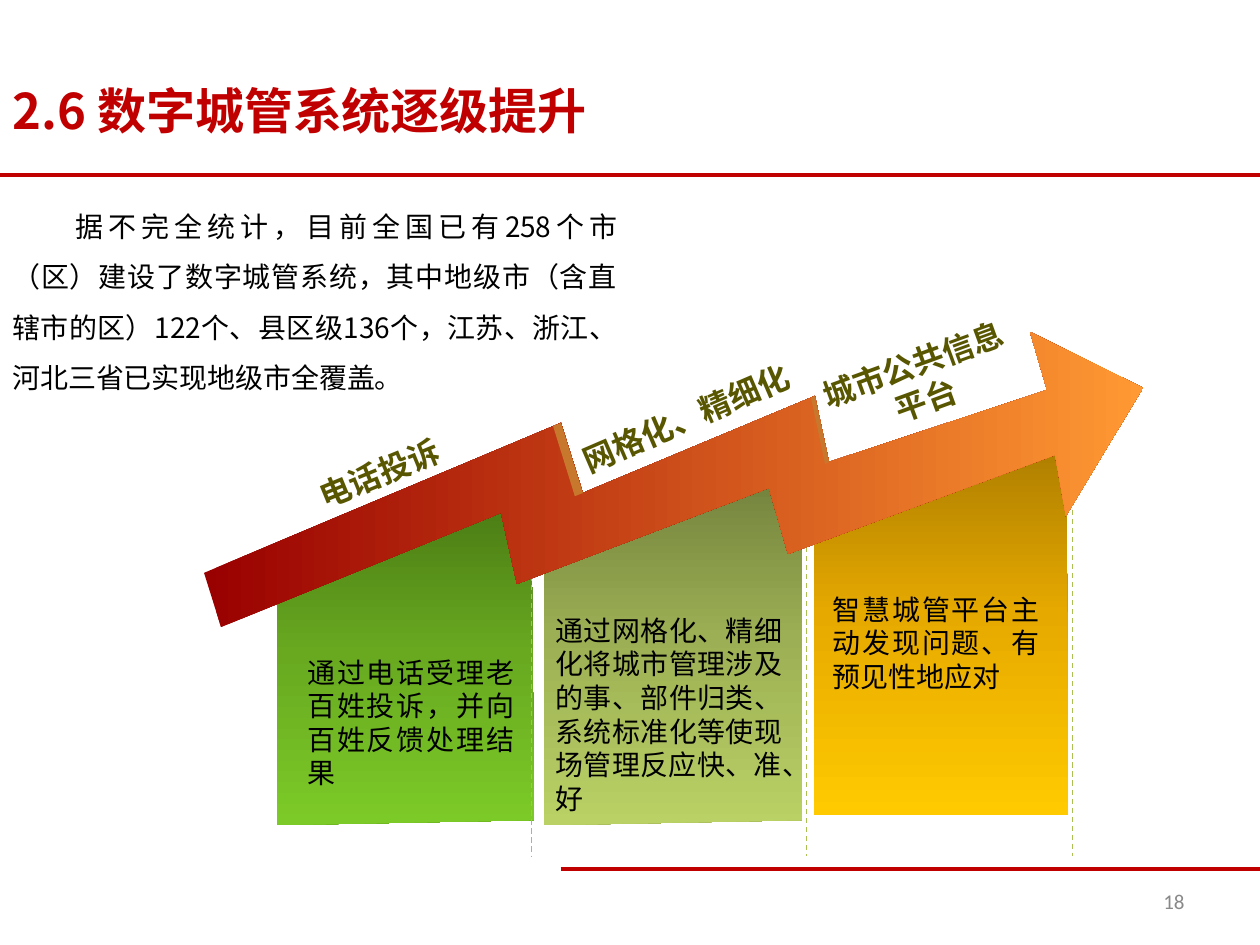
from copy import deepcopy

from lxml import etree
from pptx import Presentation
from pptx.dml.color import RGBColor
from pptx.enum.dml import MSO_LINE
from pptx.enum.shapes import MSO_CONNECTOR
from pptx.enum.text import MSO_ANCHOR, MSO_AUTO_SIZE, PP_ALIGN
from pptx.oxml.ns import qn
from pptx.util import Pt

LEFT, CENTER, RIGHT, JUSTIFY = PP_ALIGN.LEFT, PP_ALIGN.CENTER, PP_ALIGN.RIGHT, PP_ALIGN.JUSTIFY
TOP, MIDDLE = MSO_ANCHOR.TOP, MSO_ANCHOR.MIDDLE
GROW, FIXED = MSO_AUTO_SIZE.SHAPE_TO_FIT_TEXT, MSO_AUTO_SIZE.NONE
DASH, STRAIGHT = MSO_LINE.DASH, MSO_CONNECTOR.STRAIGHT
CJK_FONT, NUMBER_FONT = "Noto Sans CJK SC", "Calibri"

COLORS = {
    "red": "C00000", "label": "585600", "text": "000000",
    "guide": "A9C153", "number": "898989", "edge": "C8782D",
}

TITLE = ("2.6 数字城管系统逐级提升", (0, 42.5, 695.5, 41))
INTRO = (
    "据不完全统计，目前全国已有258个市（区）建设了数字城管系统，其中地级市（含直辖市的区）"
    "122个、县区级136个，江苏、浙江、河北三省已实现地级市全覆盖。",
    (0, 106.6, 360, 118.8),
)
PAGE_NUMBER = ("18", (516.2, 500.4, 167.8, 28.8))

# Text, box (left, top, width, height), rotation
LABELS = [
    ("电话投诉", (123.8, 255.6, 185.8, 28.8), 337.6),
    ("网格化、精细化", (321.1, 224.6, 141.8, 28.8), 336.7),
    ("城市公共信息平台", (460.8, 193, 129.6, 51.1), 340),
]
DESCRIPTIONS = [
    ("通过电话受理老百姓投诉，并向百姓反馈处理结果", (168.5, 370.8, 132.5, 85)),
    ("通过网格化、精细化将城市管理涉及的事、部件归类、系统标准化等使现场管理反应快、准、好",
     (310.3, 347, 144, 123.8)),
    ("智慧城管平台主动发现问题、有预见性地应对", (468.7, 334.8, 132.5, 65.5)),
]

# Outline, gradient colours from top to bottom
PANELS = [
    ([(293.8, 275), (303.8, 310.3), (305.3, 468.7), (158.4, 471.6), (158.4, 324.7)],
     ["467413", "68A920", "7CCA28"]),
    ([(609.1, 234.7), (610.6, 465.8), (465.1, 465.8), (465.1, 292.3)],
     ["A07400", "E6A900", "FFCA00"]),
    ([(447.8, 256.3), (458.6, 293.8), (458.6, 468.7), (311, 471.6), (311, 306.7)],
     ["6B7938", "9CAF54", "BAD165"]),
]
ARROW = [
    (116.6, 327.4), (320.6, 241.7), (333.1, 281.7), (465.7, 226.3), (473.7, 264),
    (598.3, 222.9), (588.6, 189.7), (653.1, 221.7), (609.1, 294.9), (602.9, 260),
    (450.3, 316.6), (439.4, 278.9), (295.4, 333.7), (286.3, 293.1), (126.3, 358.3),
]
ARROW_COLORS = ["990000", "FF9933"]
STEP_EDGES = [
    [(316, 243.4), (320.6, 241.7), (333.1, 281.7), (328.5, 283.5)],
    [(463.5, 227.3), (465.7, 226.3), (473.7, 264), (471.5, 265.2)],
]
RULES = [(320.4, 496.8, 720, 496.8), (0, 100.1, 720, 100.1)]
GUIDES = [(303.8, 272.2), (460.8, 271.4), (612.7, 244.8)]
GUIDE_BOTTOM = 489.2


def rgb(name):
    return RGBColor.from_string(COLORS[name])


def add_line(page, ends, color, width):
    line = page.shapes.add_connector(STRAIGHT, *map(Pt, ends))
    line.line.color.rgb = rgb(color)
    line.line.width = Pt(width)
    etree.SubElement(line._element.spPr, qn("a:effectLst"))
    return line


def add_outline(page, points):
    corners = [(Pt(x), Pt(y)) for x, y in points]
    builder = page.shapes.build_freeform(*corners[0])
    builder.add_line_segments(corners[1:], close=True)
    shape = builder.convert_to_shape()
    shape.shadow.inherit = False
    shape.line.fill.background()
    return shape


def fill_gradient(shape, colors, angle):
    """Spread the colours evenly; the angle runs counter-clockwise."""
    shape.fill.gradient()
    shape.fill.gradient_angle = angle
    stops = shape._element.spPr.find(".//" + qn("a:gsLst"))
    for _ in colors[2:]:
        stops.insert(1, deepcopy(stops[0]))
    for index, (stop, color) in enumerate(zip(shape.fill.gradient_stops, colors)):
        stop.position = index / (len(colors) - 1)
        stop.color.rgb = RGBColor.from_string(color)


def write(box, text, frame, size, color, align, bold=False, anchor=TOP,
          font=CJK_FONT, autosize=GROW):
    box.left, box.top, box.width, box.height = map(Pt, frame)
    body = box.text_frame
    body.text = text
    body.word_wrap = True
    body.auto_size = autosize
    body.vertical_anchor = anchor
    para = body.paragraphs[0]
    para.alignment = align
    span = para.runs[0]
    span.font.name = font
    span.font.size = Pt(size)
    span.font.bold = bold
    span.font.color.rgb = rgb(color)
    etree.SubElement(span.font._element, qn("a:ea")).set("typeface", font)
    return para


def add_text(page, text, frame, *style, **options):
    box = page.shapes.add_textbox(*map(Pt, frame))
    write(box, text, frame, *style, **options)
    return box


def main():
    deck = Presentation()
    deck.slide_width, deck.slide_height = Pt(720), Pt(540)
    page = deck.slides.add_slide(deck.slide_layouts[5])

    write(page.shapes.title, *TITLE, 28, "red", LEFT, bold=True)
    for ends in RULES:
        add_line(page, ends, "red", 2.25)
    add_text(page, *PAGE_NUMBER, 12, "number", RIGHT, anchor=MIDDLE,
             font=NUMBER_FONT, autosize=FIXED)

    for points, colors in PANELS:
        fill_gradient(add_outline(page, points), colors, 270)
    for x, top in GUIDES:
        add_line(page, (x, top, x, GUIDE_BOTTOM), "guide", 0.75).line.dash_style = DASH

    fill_gradient(add_outline(page, ARROW), ARROW_COLORS, 0)
    for points in STEP_EDGES:
        edge = add_outline(page, points)
        edge.fill.solid()
        edge.fill.fore_color.rgb = rgb("edge")

    for text, frame, rotation in LABELS:
        add_text(page, text, frame, 18, "label", CENTER, bold=True).rotation = rotation
    for text, frame in DESCRIPTIONS:
        add_text(page, text, frame, 16, "text", JUSTIFY)

    intro = add_text(page, *INTRO, 16, "text", JUSTIFY).text_frame.paragraphs[0]
    intro.line_spacing = 1.5
    intro._p.get_or_add_pPr().set("indent", str(Pt(36)))

    deck.save("out.pptx")


if __name__ == "__main__":
    main()
